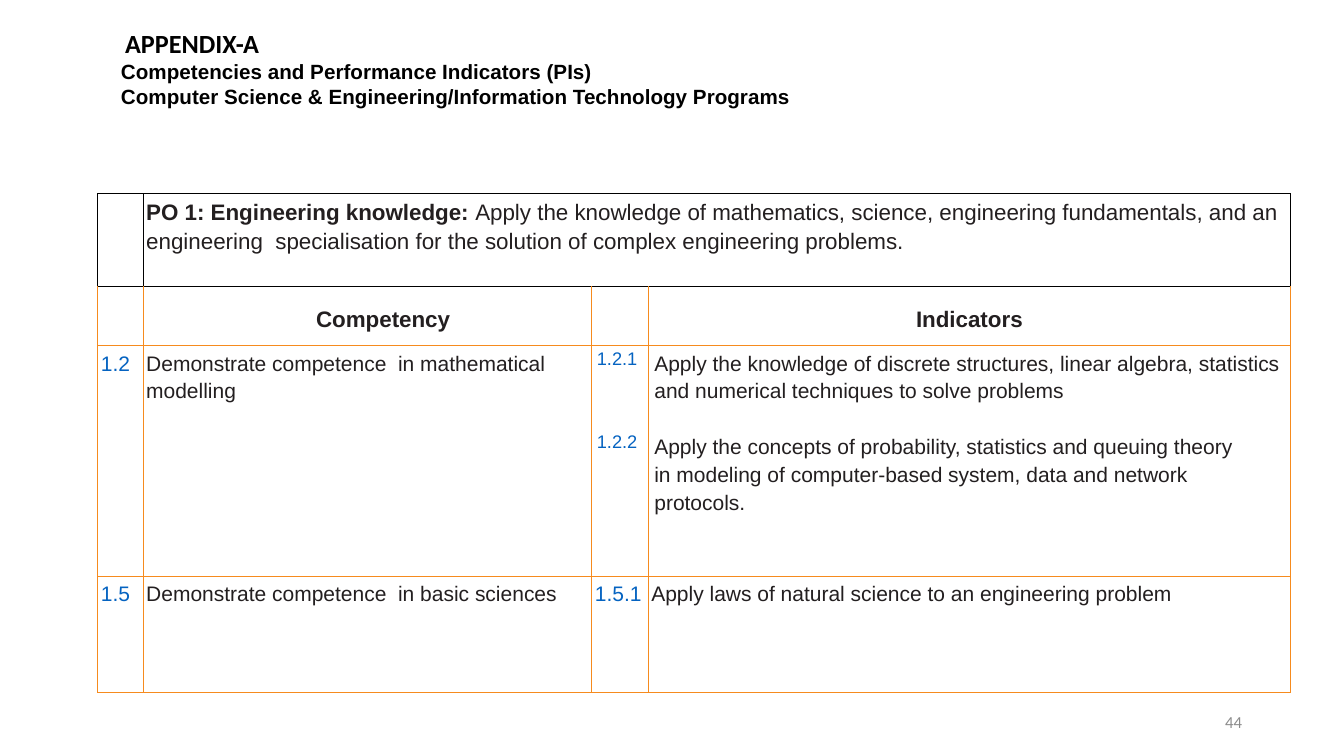
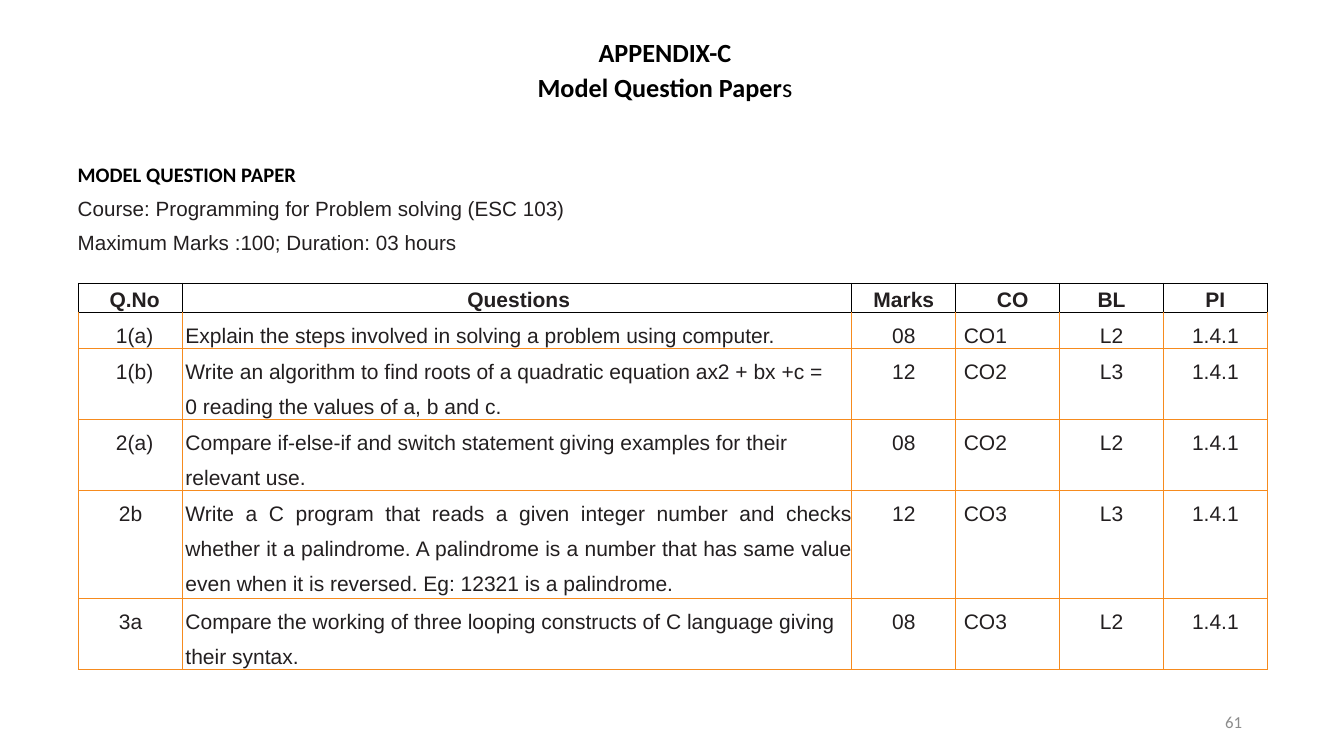
import lxml.etree
import pptx
import pptx.dml.color
import pptx.enum.text
import pptx.oxml.ns
import pptx.util

Inches = pptx.util.Inches
Pt = pptx.util.Pt
RGBColor = pptx.dml.color.RGBColor
Align = pptx.enum.text.PP_ALIGN
Anchor = pptx.enum.text.MSO_ANCHOR
qn = pptx.oxml.ns.qn

BLACK = RGBColor(0x00, 0x00, 0x00)
INK = RGBColor(0x23, 0x1F, 0x20)
BLUE = RGBColor(0x05, 0x63, 0xC1)
ORANGE = RGBColor(0xF6, 0x8B, 0x1E)
GREY = RGBColor(0x8C, 0x8C, 0x8C)
HEADING = dict(font="Calibri", size=18.7, color=BLACK, bold=True, indent=0.02)


def write(frame, text, font="Arial", size=15, color=INK, bold=False,
          align=Align.LEFT, indent=0, spacing=1.0, before=0):
    """Add one paragraph; text is a string or a list of (text, bold) runs."""
    paragraph = frame.paragraphs[0]
    if paragraph.runs:
        paragraph = frame.add_paragraph()
    paragraph.alignment = align
    paragraph.line_spacing = spacing
    paragraph.space_before = Pt(before)
    properties = paragraph._p.get_or_add_pPr()
    properties.set("marL", str(Inches(indent)))
    properties.set("indent", "0")
    for words, weight in [(text, bold)] if isinstance(text, str) else text:
        run = paragraph.add_run()
        run.text = words
        run.font.name = font
        run.font.size = Pt(size)
        run.font.bold = weight
        run.font.color.rgb = color


class Deck:
    """Holds the shared style and the slide being built."""

    def __init__(self):
        self.presentation = pptx.Presentation()
        self.presentation.slide_width = Inches(13.33)
        self.presentation.slide_height = Inches(7.5)
        self.slide = None

    def start_slide(self, number):
        layout = self.presentation.slide_layouts[5]
        self.slide = self.presentation.slides.add_slide(layout)
        page_number = self.text_box(9.42, 6.95, 2.9, 0.4)
        write(page_number, number, font="Calibri", size=12, color=GREY,
              align=Align.RIGHT)

    def set_frame(self, frame, anchor):
        frame.auto_size = pptx.enum.text.MSO_AUTO_SIZE.NONE
        frame.word_wrap = True
        frame.vertical_anchor = anchor
        frame.margin_left = frame.margin_right = frame.margin_bottom = 0
        frame.margin_top = Inches(0.02)
        return frame

    def title(self, left, top, width, height):
        heading = self.slide.shapes.title
        heading.left, heading.top = Inches(left), Inches(top)
        heading.width, heading.height = Inches(width), Inches(height)
        return self.set_frame(heading.text_frame, Anchor.MIDDLE)

    def text_box(self, left, top, width, height, anchor=Anchor.MIDDLE):
        box = self.slide.shapes.add_textbox(
            Inches(left), Inches(top), Inches(width), Inches(height))
        return self.set_frame(box.text_frame, anchor)

    def table(self, left, top, columns, rows, margin_top):
        """Add a grid with a black first row and orange rows below it."""
        grid = self.slide.shapes.add_table(
            len(rows), len(columns), Inches(left), Inches(top),
            Inches(sum(columns)), Inches(sum(rows))).table
        grid.first_row = grid.horz_banding = False
        for column, width in zip(grid.columns, columns):
            column.width = Inches(width)
        for index, (row, height) in enumerate(zip(grid.rows, rows)):
            row.height = Inches(height)
            for cell in row.cells:
                cell.margin_left = cell.margin_right = cell.margin_bottom = 0
                cell.margin_top = Inches(margin_top)
                cell.fill.background()
                self.borders(cell, BLACK if index == 0 else ORANGE,
                             BLACK if index <= 1 else ORANGE)
        return grid

    def borders(self, cell, color, top_color):
        properties = cell._tc.get_or_add_tcPr()
        sides = [("L", color), ("R", color), ("T", top_color), ("B", color)]
        for position, (side, side_color) in enumerate(sides):
            line = lxml.etree.Element(qn("a:ln" + side), w=str(Pt(0.75)))
            fill = lxml.etree.SubElement(line, qn("a:solidFill"))
            lxml.etree.SubElement(fill, qn("a:srgbClr"), val=str(side_color))
            properties.insert(position, line)


def build_competencies(deck):
    deck.start_slide("44")
    write(deck.title(1.22, 0.28, 2.19, 0.27), "APPENDIX-A", **HEADING)
    subtitle = deck.text_box(1.18, 0.56, 6.93, 0.52)
    for line in ("Competencies and Performance Indicators (PIs)",
                 "Computer Science & Engineering/Information Technology Programs"):
        write(subtitle, line, size=14.7, color=BLACK, bold=True, indent=0.02)

    grid = deck.table(0.97, 1.92, [0.45, 4.45, 0.56, 6.37],
                      [0.92, 0.59, 2.29, 1.15], margin_top=0.03)

    # Outcome and column headings
    grid.cell(0, 1).merge(grid.cell(0, 3))
    write(grid.cell(0, 1).text_frame, [
        ("PO 1: Engineering knowledge: ", True),
        ("Apply the knowledge of mathematics, science, engineering "
         "fundamentals, and an engineering  specialisation for the solution "
         "of complex engineering problems.", False),
    ], size=16, indent=0.03, spacing=1.15)
    for column, heading, indent in ((1, "Competency", 0.31), (3, "Indicators", 0)):
        cell = grid.cell(1, column)
        cell.vertical_anchor = Anchor.MIDDLE
        write(cell.text_frame, heading, size=16, bold=True,
              align=Align.CENTER, indent=indent, spacing=1.15)

    # Competencies with their indicators: row, column, lines, format
    number = dict(color=BLUE, indent=0.03, spacing=1.15)
    small_number = dict(color=BLUE, size=13, indent=0.05)
    plain = dict(indent=0.03, spacing=1.15)
    indicator = dict(indent=0.06, spacing=1.15)
    entries = [
        (2, 0, ["1.2"], number),
        (2, 1, ["Demonstrate competence  in mathematical", "modelling"], plain),
        (2, 2, ["1.2.1"], small_number),
        (2, 2, ["1.2.2"], dict(small_number, before=45)),
        (2, 3, ["Apply the knowledge of discrete structures, linear algebra, statistics",
                "and numerical techniques to solve problems"], indicator),
        (2, 3, ["Apply the concepts of probability, statistics and queuing theory"],
         dict(indicator, before=21)),
        (2, 3, ["in modeling of computer-based system, data and network",
                "protocols."], dict(indicator, before=1)),
        (3, 0, ["1.5"], number),
        (3, 1, ["Demonstrate competence  in basic sciences"], plain),
        (3, 2, ["1.5.1"], number),
        (3, 3, ["Apply laws of natural science to an engineering problem"], plain),
    ]
    for row, column, lines, style in entries:
        for line in lines:
            write(grid.cell(row, column).text_frame, line, **style)


def build_question_paper(deck):
    deck.start_slide("61")
    title = deck.title(0.75, 0.33, 11.67, 0.65)
    write(title, "APPENDIX-C", align=Align.CENTER, spacing=1.15, **HEADING)
    write(title, [("Model Question Paper", True), ("s", False)],
          align=Align.CENTER, spacing=1.1, **HEADING)

    # Course details
    course = deck.text_box(0.75, 1.59, 5.38, 1.22, Anchor.TOP)
    write(course, "MODEL QUESTION PAPER", **dict(HEADING, size=14.7))
    for line in ("Course: Programming for Problem solving (ESC 103)",
                 "Maximum Marks :100; Duration: 03 hours"):
        write(course, line, size=14.7, indent=0.02, before=6.5)

    grid = deck.table(0.78, 2.81, [1.03, 6.64] + [1.03] * 4,
                      [0.27, 0.34, 0.7, 0.7, 1.07, 0.7], margin_top=0.01)

    # Column headings
    headings = [("Q.No", 0.08), ("Questions", 0.03), ("Marks", 0),
                ("CO", 0.1), ("BL", 0), ("PI", 0)]
    for column, (heading, indent) in enumerate(headings):
        cell = grid.cell(0, column)
        cell.vertical_anchor = Anchor.MIDDLE
        cell.margin_top = Inches(0.02)
        write(cell.text_frame, heading, bold=True, align=Align.CENTER,
              indent=indent, spacing=1.15)

    # Questions
    questions = [
        ("1(a)", ["Explain the steps involved in solving a problem using computer."],
         "08", "CO1", "L2"),
        ("1(b)", ["Write an algorithm to find roots of a quadratic equation ax2 + bx +c =",
                  "0 reading the values of a, b and c."], "12", "CO2", "L3"),
        ("2(a)", ["Compare if-else-if and switch statement giving examples for their "
                  "relevant use."], "08", "CO2", "L2"),
        ("2b", ["Write a C program that reads a given integer number and checks "
                "whether it a palindrome. A palindrome is a number that has same "
                "value even when it is reversed. Eg: 12321 is a palindrome."],
         "12", "CO3", "L3"),
        ("3a", ["Compare the working of three looping constructs of C language giving "
                "their syntax."], "08", "CO3", "L2"),
    ]
    for row, (number, lines, marks, outcome, level) in enumerate(questions, 1):
        number_indent = 0.08 if "(" in number else 0
        question_align = Align.JUSTIFY if number == "2b" else Align.LEFT
        entries = [
            ([number], Align.CENTER, number_indent),
            (lines, question_align, 0.03),
            ([marks], Align.CENTER, 0),
            ([outcome], Align.LEFT, 0.08),
            ([level], Align.CENTER, 0),
            (["1.4.1"], Align.CENTER, 0),
        ]
        for column, (texts, align, indent) in enumerate(entries):
            for text in texts:
                write(grid.cell(row, column).text_frame, text, align=align,
                      indent=indent, spacing=1.5)


def main():
    deck = Deck()
    build_competencies(deck)
    build_question_paper(deck)
    deck.presentation.save("out.pptx")


if __name__ == "__main__":
    main()
